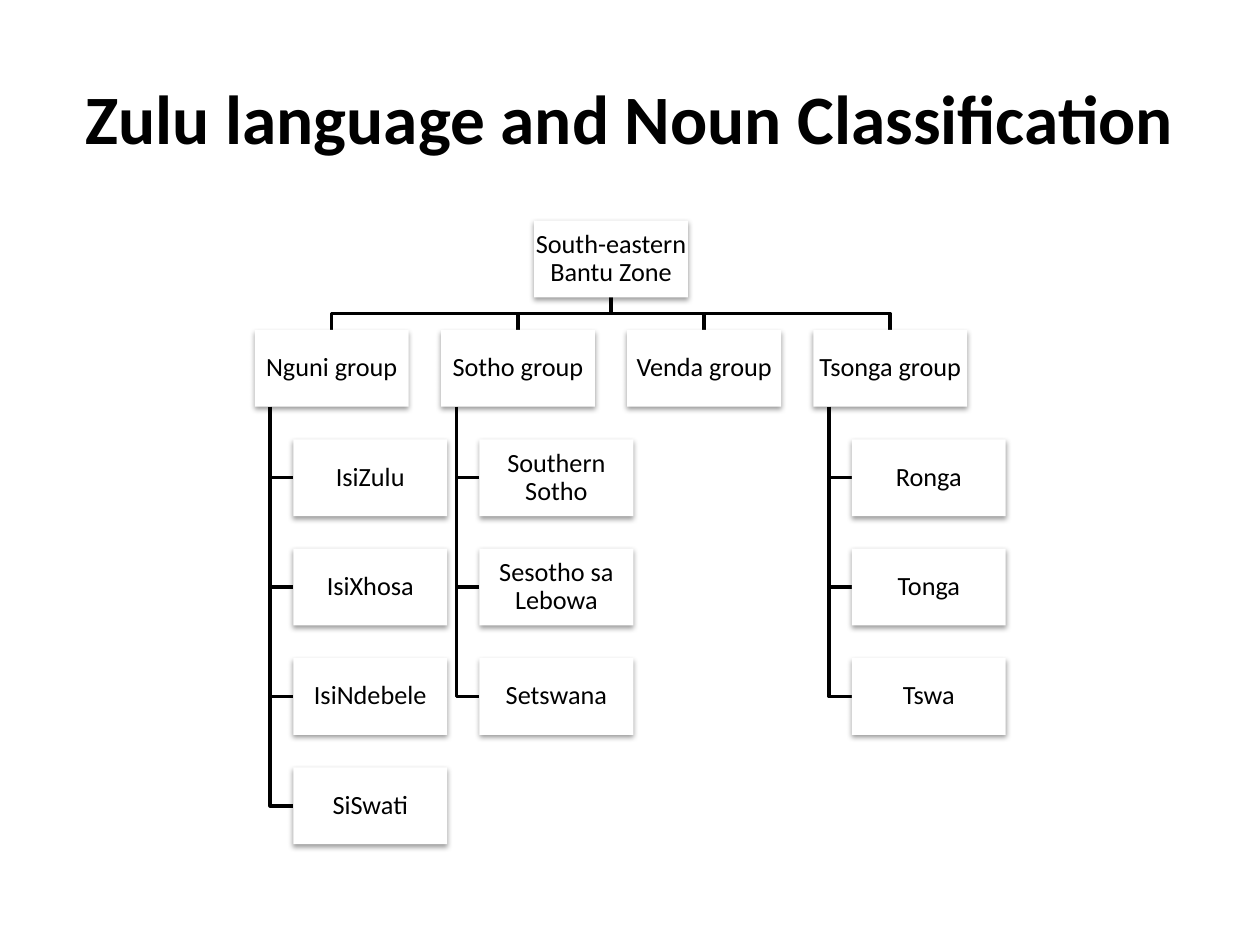
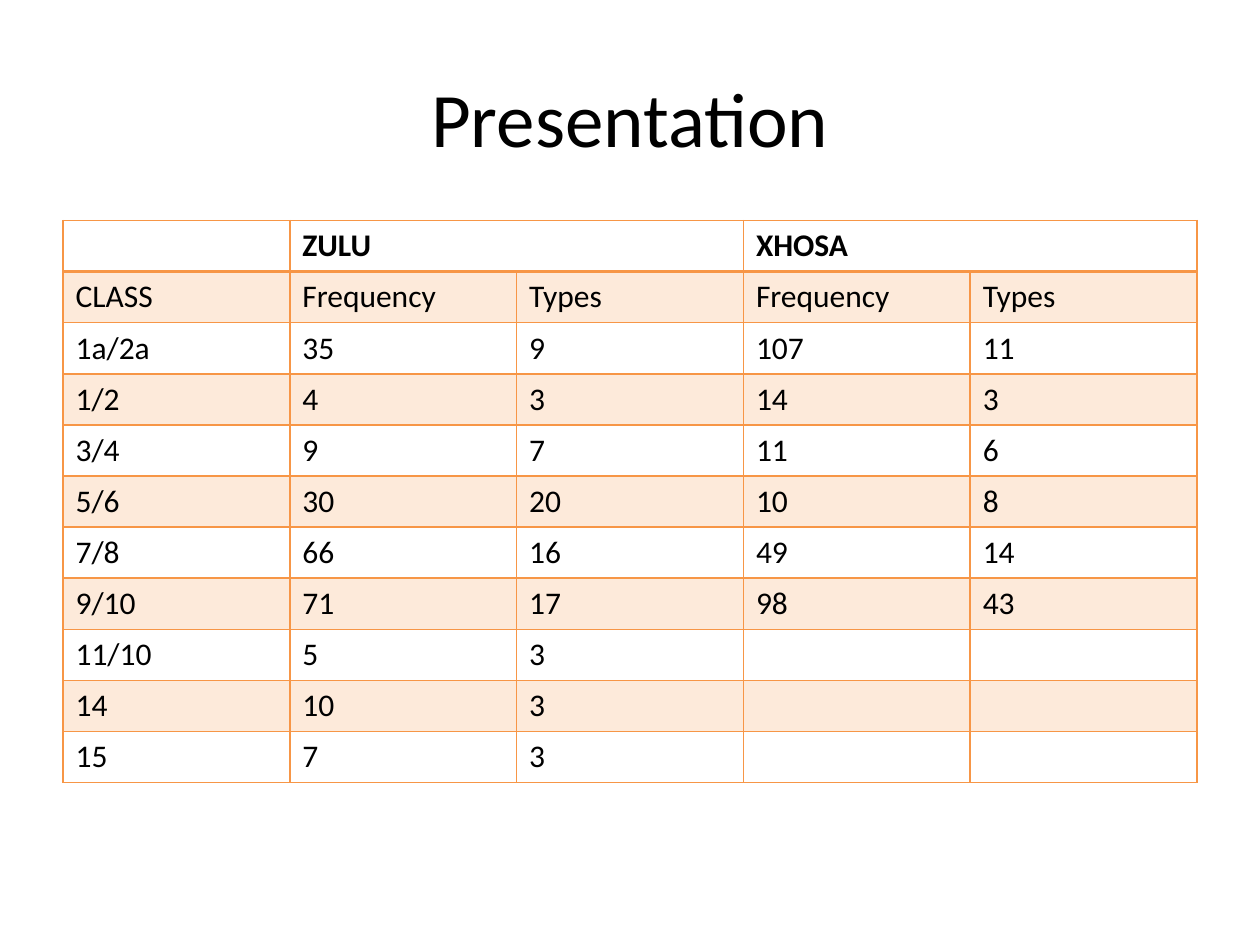
"""Build two slides: a language family tree and a noun class table."""
import pptx
import pptx.util
import pptx.dml.color
import pptx.enum.shapes
import pptx.enum.text
import pptx.oxml

Pt = pptx.util.Pt
Align = pptx.enum.text.PP_ALIGN
Anchor = pptx.enum.text.MSO_ANCHOR
BLACK, WHITE, ORANGE, PEACH = "000000", "FFFFFF", "F79646", "FDEADA"
FONT = "Calibri"
SPACE = 'xmlns:a="http://schemas.openxmlformats.org/drawingml/2006/main"'


def hue(code):
    return pptx.dml.color.RGBColor.from_string(code)


def write(frame, text, size=18, bold=False, align=Align.LEFT, lead=1.0):
    frame.word_wrap = True
    para = frame.paragraphs[0]
    para.alignment = align
    para.line_spacing = lead
    run = para.add_run()
    run.text = text
    run.font.name = FONT
    run.font.size = Pt(size)
    run.font.bold = bold
    run.font.color.rgb = hue(BLACK)


deck = pptx.Presentation()
deck.slide_width, deck.slide_height = Pt(720), Pt(540)

pages = []
for title, size, bold in [
    ("Zulu language and Noun Classification", 39.6, True),
    ("Presentation", 44, False),
]:
    page = deck.slides.add_slide(deck.slide_layouts[6])
    frame = page.shapes.add_textbox(Pt(36), Pt(21.6), Pt(648), Pt(90)).text_frame
    frame.vertical_anchor = Anchor.MIDDLE
    write(frame, title, size=size, bold=bold, align=Align.CENTER)
    pages.append(page)
tree, data = pages

groups = {
    "Nguni group": ["IsiZulu", "IsiXhosa", "IsiNdebele", "SiSwati"],
    "Sotho group": ["Southern Sotho", "Sesotho sa Lebowa", "Setswana"],
    "Venda group": [],
    "Tsonga group": ["Ronga", "Tonga", "Tswa"],
}
WIDE, HIGH = 87.9, 43.9
LEFT, TOP = 145.6, 126
STEP, DROP = 106.4, 62.5
STEM, SHIFT = 8.8, 22

mid = LEFT + (STEP * (len(groups) - 1) + WIDE) / 2
base = TOP + HIGH
level = TOP + DROP
bus = (base + level) / 2
boxes = [("South-eastern Bantu Zone", mid - WIDE / 2, TOP)]
wires = []
for col, (group, tongues) in enumerate(groups.items()):
    left = LEFT + col * STEP
    hub = left + WIDE / 2
    stem = left + STEM
    boxes.append((group, left, level))
    wires.append([(mid, base), (mid, bus), (hub, bus), (hub, level)])
    for row, tongue in enumerate(tongues, 1):
        top = level + row * DROP
        turn = top + HIGH / 2
        boxes.append((tongue, left + SHIFT, top))
        wires.append([(stem, level + HIGH), (stem, turn), (left + SHIFT, turn)])

for wire in wires:
    dots = [(Pt(x), Pt(y)) for x, y in wire]
    path = tree.shapes.build_freeform(*dots[0])
    path.add_line_segments(dots[1:], close=False)
    line = path.convert_to_shape()
    line.shadow.inherit = False
    line.fill.background()
    line.line.color.rgb = hue(BLACK)
    line.line.width = Pt(2)

for text, left, top in boxes:
    box = tree.shapes.add_shape(
        pptx.enum.shapes.MSO_SHAPE.RECTANGLE, Pt(left), Pt(top), Pt(WIDE), Pt(HIGH)
    )
    box.fill.solid()
    box.fill.fore_color.rgb = hue(WHITE)
    box.line.fill.background()
    box.shadow.inherit = False
    shade = pptx.oxml.parse_xml(
        f'<a:outerShdw {SPACE} blurRad="{Pt(3.1)}" dist="{Pt(1.6)}" dir="5400000" '
        f'rotWithShape="0"><a:srgbClr val="{BLACK}"><a:alpha val="38000"/>'
        "</a:srgbClr></a:outerShdw>"
    )
    box.element.spPr.find(pptx.oxml.ns.qn("a:effectLst")).append(shade)
    frame = box.text_frame
    frame.vertical_anchor = Anchor.MIDDLE
    frame.margin_left = frame.margin_right = Pt(0.75)
    frame.margin_top = frame.margin_bottom = Pt(0.75)
    write(frame, text, size=15, align=Align.CENTER, lead=0.9)

rows = [
    ["", "ZULU", "", "XHOSA", ""],
    ["CLASS", "Frequency", "Types", "Frequency", "Types"],
    ["1a/2a", "35", "9", "107", "11"],
    ["1/2", "4", "3", "14", "3"],
    ["3/4", "9", "7", "11", "6"],
    ["5/6", "30", "20", "10", "8"],
    ["7/8", "66", "16", "49", "14"],
    ["9/10", "71", "17", "98", "43"],
    ["11/10", "5", "3", "", ""],
    ["14", "10", "3", "", ""],
    ["15", "7", "3", "", ""],
]
grid = data.shapes.add_table(
    len(rows), len(rows[0]), Pt(36), Pt(126), Pt(648), Pt(29.2 * len(rows))
).table
grid.first_row = grid.horz_banding = False
for col in (1, 3):
    grid.cell(0, col).merge(grid.cell(0, col + 1))
for row, texts in enumerate(rows):
    grid.rows[row].height = Pt(29.2)
    for col, text in enumerate(texts):
        cell = grid.cell(row, col)
        cell.fill.solid()
        cell.fill.fore_color.rgb = hue(PEACH if row % 2 else WHITE)
        if text:
            write(cell.text_frame, text, bold=row == 0)
        for spot, side in enumerate("LRTB"):
            thick = 2 if (row, side) in [(0, "B"), (1, "T")] else 1
            edge = pptx.oxml.parse_xml(
                f'<a:ln{side} {SPACE} w="{Pt(thick)}"><a:solidFill>'
                f'<a:srgbClr val="{ORANGE}"/></a:solidFill></a:ln{side}>'
            )
            cell._tc.get_or_add_tcPr().insert(spot, edge)

deck.save("out.pptx")
